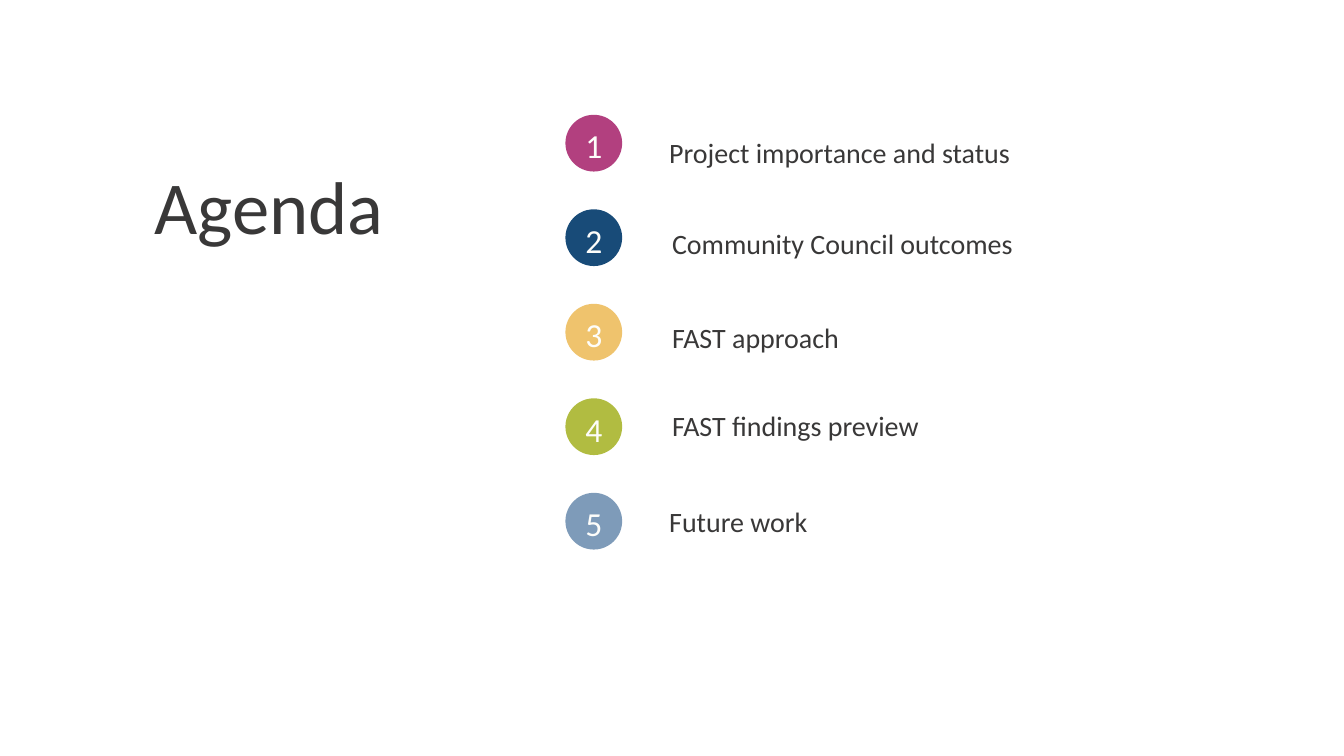
"""Build an agenda slide with five numbered topics."""
from dataclasses import dataclass

from pptx import Presentation
from pptx.dml.color import RGBColor
from pptx.enum.shapes import MSO_SHAPE
from pptx.enum.text import MSO_ANCHOR, MSO_AUTO_SIZE, PP_ALIGN
from pptx.shapes.autoshape import Shape
from pptx.slide import Slide
from pptx.util import Pt

INK = RGBColor(0x39, 0x38, 0x38)
OFF_WHITE = RGBColor(0xFD, 0xFD, 0xFA)
MAGENTA = RGBColor(0xB2, 0x40, 0x7F)
NAVY = RGBColor(0x18, 0x4B, 0x78)
AMBER = RGBColor(0xEF, 0xC3, 0x6D)
LIME = RGBColor(0xB1, 0xBC, 0x41)
STEEL = RGBColor(0x7E, 0x9B, 0xB9)

FONT = "Calibri"
BADGE_LEFT = 605.8
BADGE_TOP = 123
BADGE_SIZE = 60.8
BADGE_PITCH = 101.25


@dataclass(frozen=True)
class Topic:
    """One agenda topic, with lengths in points."""

    text: str
    color: RGBColor
    left: float
    top: float
    width: float = 576.7
    height: float = 54
    line_spacing: float = 60


TOPICS = (
    Topic("Project importance and status", MAGENTA, 717, 121),
    Topic("Community Council outcomes", NAVY, 720, 218.2),
    Topic("FAST approach", AMBER, 720, 319),
    Topic("FAST findings preview", LIME, 720, 442, 639.4, 32.4, 31.5),
    Topic("Future work", STEEL, 717, 517),
)


def place(shape: Shape, left: float, top: float, width: float, height: float) -> None:
    """Position a shape, with lengths in points."""
    shape.left, shape.top = Pt(left), Pt(top)
    shape.width, shape.height = Pt(width), Pt(height)


def write(shape: Shape, text: str, size: float, color: RGBColor,
          line_spacing: float, alignment: PP_ALIGN = PP_ALIGN.LEFT) -> None:
    """Fill a shape with one formatted paragraph and no margins."""
    frame = shape.text_frame
    frame.text = text
    frame.word_wrap = True
    frame.auto_size = MSO_AUTO_SIZE.SHAPE_TO_FIT_TEXT
    frame.vertical_anchor = MSO_ANCHOR.TOP
    frame.margin_left = frame.margin_right = Pt(0)
    frame.margin_top = frame.margin_bottom = Pt(0)
    paragraph = frame.paragraphs[0]
    paragraph.alignment = alignment
    paragraph.line_spacing = Pt(line_spacing)
    paragraph.font.name = FONT
    paragraph.font.size = Pt(size)
    paragraph.font.color.rgb = color


def add_badge(slide: Slide, number: int, color: RGBColor) -> None:
    """Draw a colored circle with its number."""
    top = BADGE_TOP + (number - 1) * BADGE_PITCH
    circle = slide.shapes.add_shape(
        MSO_SHAPE.OVAL, Pt(BADGE_LEFT), Pt(top), Pt(BADGE_SIZE), Pt(BADGE_SIZE))
    circle.shadow.inherit = False
    circle.fill.solid()
    circle.fill.fore_color.rgb = color
    circle.line.fill.background()
    label = slide.shapes.add_textbox(
        Pt(BADGE_LEFT + 9), Pt(top - 2), Pt(43.2), Pt(53.3))
    write(label, str(number), 36, OFF_WHITE, 56.5, PP_ALIGN.CENTER)


def add_topic(slide: Slide, number: int, topic: Topic) -> None:
    """Draw a topic's text and numbered badge."""
    label = slide.shapes.add_textbox(
        Pt(topic.left), Pt(topic.top), Pt(topic.width), Pt(topic.height))
    write(label, topic.text, 30, INK, topic.line_spacing)
    add_badge(slide, number, topic.color)


def main() -> None:
    """Create and save the presentation."""
    presentation = Presentation()
    presentation.slide_width, presentation.slide_height = Pt(1440), Pt(810)
    slide = presentation.slides.add_slide(presentation.slide_layouts[5])
    title = slide.shapes.title
    place(title, 165.6, 171.4, 335.5, 95.8)
    write(title, "Agenda", 80, INK, 96)
    for number, topic in enumerate(TOPICS, start=1):
        add_topic(slide, number, topic)
    presentation.save("out.pptx")


if __name__ == "__main__":
    main()
